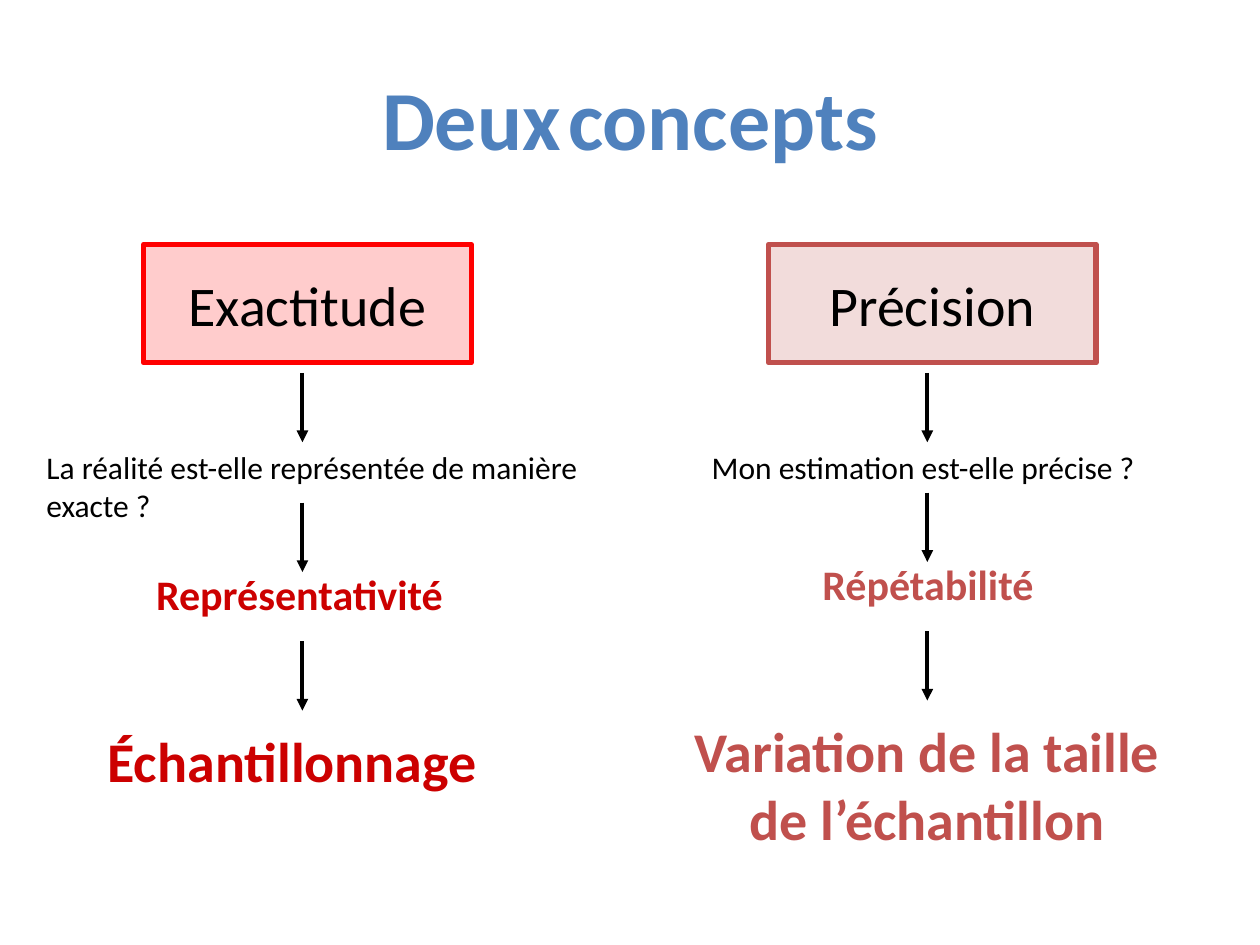
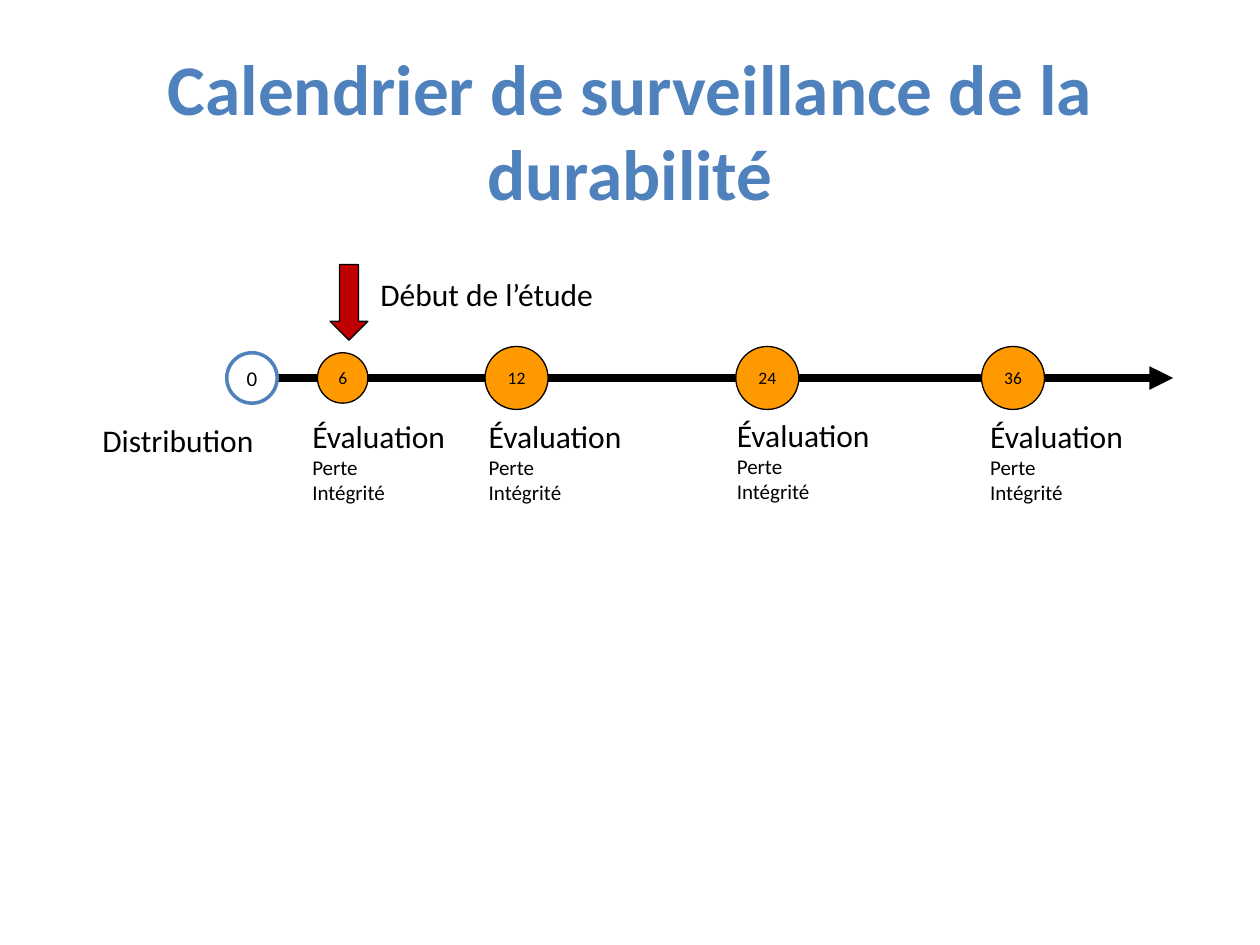
"""Build two slides: accuracy versus precision, and a durability monitoring timeline."""
from pptx import Presentation, util as u
from pptx.dml.color import RGBColor
from pptx.enum import shapes, text
from pptx.oxml import ns
from lxml import etree

PX = 9144
FONT = "Calibri"
C = {"blue": "4F81BD", "black": "000000", "white": "FFFFFF", "red": "FF0000",
     "dark_red": "CC0000", "brick": "C0504D", "orange": "FF9900", "arrow": "C00000"}
LEFT, CENTER, RIGHT = text.PP_ALIGN.LEFT, text.PP_ALIGN.CENTER, text.PP_ALIGN.RIGHT
KIND = shapes.MSO_SHAPE


def put(s, box, lines=(), color="black", bold=False, align=LEFT, kind=None, fill=None,
        line="black", width=0.75):
    """Add a text box, or a preset shape when kind is given, with (text, size) lines."""
    box = [v * PX for v in box]
    if kind is None:
        sp = s.shapes.add_textbox(*box)
    else:
        sp = s.shapes.add_shape(kind, *box)
        sp.shadow.inherit = False
        sp.fill.solid()
        sp.fill.fore_color.rgb = RGBColor.from_string(C[fill])
        sp.line.color.rgb = RGBColor.from_string(C[line])
        sp.line.width = u.Pt(width)
    tf = sp.text_frame
    tf.word_wrap = kind is None
    if kind is None:
        tf.auto_size = text.MSO_AUTO_SIZE.SHAPE_TO_FIT_TEXT
    else:
        tf.vertical_anchor = text.MSO_ANCHOR.MIDDLE
    for i, (words, size) in enumerate(lines):
        p = tf.add_paragraph() if i else tf.paragraphs[0]
        p.text = words
        p.alignment = align
        p.font.name, p.font.size, p.font.bold = FONT, u.Pt(size), bold
        p.font.color.rgb = RGBColor.from_string(C[color])
    return sp


def arrow(s, x1, y1, x2, y2, width):
    """Add a straight black arrow."""
    c = s.shapes.add_connector(shapes.MSO_CONNECTOR.STRAIGHT, x1 * PX, y1 * PX, x2 * PX, y2 * PX)
    c.line.color.rgb = RGBColor.from_string(C["black"])
    c.line.width = u.Pt(width)
    sp_pr = c.element.spPr
    etree.SubElement(sp_pr.find(ns.qn("a:ln")), ns.qn("a:tailEnd"), type="triangle")
    etree.SubElement(sp_pr, ns.qn("a:effectLst"))


prs = Presentation()
prs.slide_width, prs.slide_height = 1000 * PX, 750 * PX

titles = [
    ([("Deux", 48), (" ", 18), ("concepts", 48)], text.MSO_ANCHOR.MIDDLE),
    ([("Calendrier de surveillance de la durabilité", 40.7)], text.MSO_ANCHOR.TOP),
]
for runs, anchor in titles:
    s = prs.slides.add_slide(prs.slide_layouts[5])
    sp = s.shapes.title
    sp.left, sp.top, sp.width, sp.height = 50 * PX, 30 * PX, 900 * PX, 125 * PX
    tf = sp.text_frame
    tf.auto_size = text.MSO_AUTO_SIZE.NONE
    tf.vertical_anchor = anchor
    p = tf.paragraphs[0]
    p.alignment = CENTER
    p.font.name, p.font.bold = FONT, True
    p.font.color.rgb = RGBColor.from_string(C["blue"])
    for words, size in runs:
        r = p.add_run()
        r.text = words
        r.font.size = u.Pt(size)

concepts, timeline = prs.slides

columns = [
    ("Exactitude", 114, "red", "dark_red", 240, (296, 399, 509),
     ("La réalité est-elle représentée de manière exacte\u00a0?", (27, 351, 457, 40)),
     ("Représentativité", (114, 446, 331, 50), LEFT),
     ("Échantillonnage", (51, 572, 362, 63))),
    ("Précision", 610, "brick", "brick", 736, (296, 391, 501),
     ("Mon estimation est-elle précise\u00a0?", (555, 351, 382, 40)),
     ("Répétabilité", (571, 438, 331, 50), CENTER),
     ("Variation de la taille de l’échantillon", (531, 564, 410, 117))),
]
for name, left, tint, ink, x, tops, question, quality, method in columns:
    sp = put(concepts, (left, 194, 260, 94), [(name, 32)], align=CENTER,
             kind=KIND.RECTANGLE, fill=tint, line=tint, width=3)
    color = sp.element.spPr.find(ns.qn("a:solidFill"))[0]
    etree.SubElement(color, ns.qn("a:alpha"), val="20000")
    put(concepts, question[1], [(question[0], 18)])
    put(concepts, quality[1], [(quality[0], 24)], ink, True, quality[2])
    put(concepts, method[1], [(method[0], 32)], ink, True, CENTER)
    for y in tops:
        arrow(concepts, x, y, x, y + 55, 2.25)

AXIS = 300
arrow(timeline, 193, AXIS, 931, AXIS, 4.5)
put(timeline, (180, AXIS - 20, 40, 40), [("0", 12)], align=CENTER, kind=KIND.OVAL,
    fill="white", line="blue", width=2)
put(timeline, (59, 329, 152, 40), [("Distribution", 18)], align=RIGHT)
put(timeline, (262, 210, 30, 60), kind=KIND.DOWN_ARROW, fill="arrow")
put(timeline, (292, 213, 322, 40), [("Début de l’étude", 18)])

evaluations = [("6", 252, 40, 238, 326, 128), ("12", 385, 50, 378, 326, 128),
               ("24", 584, 50, 575, 325, 130), ("36", 779, 50, 776, 326, 138)]
for month, left, size, label_left, label_top, label_width in evaluations:
    put(timeline, (left, AXIS - size // 2, size, size), [(month, 10)], align=CENTER,
        kind=KIND.OVAL, fill="orange")
    put(timeline, (label_left, label_top, label_width, 81),
        [("Évaluation", 18), ("Perte", 12), ("Intégrité", 12)])

prs.save("out.pptx")
